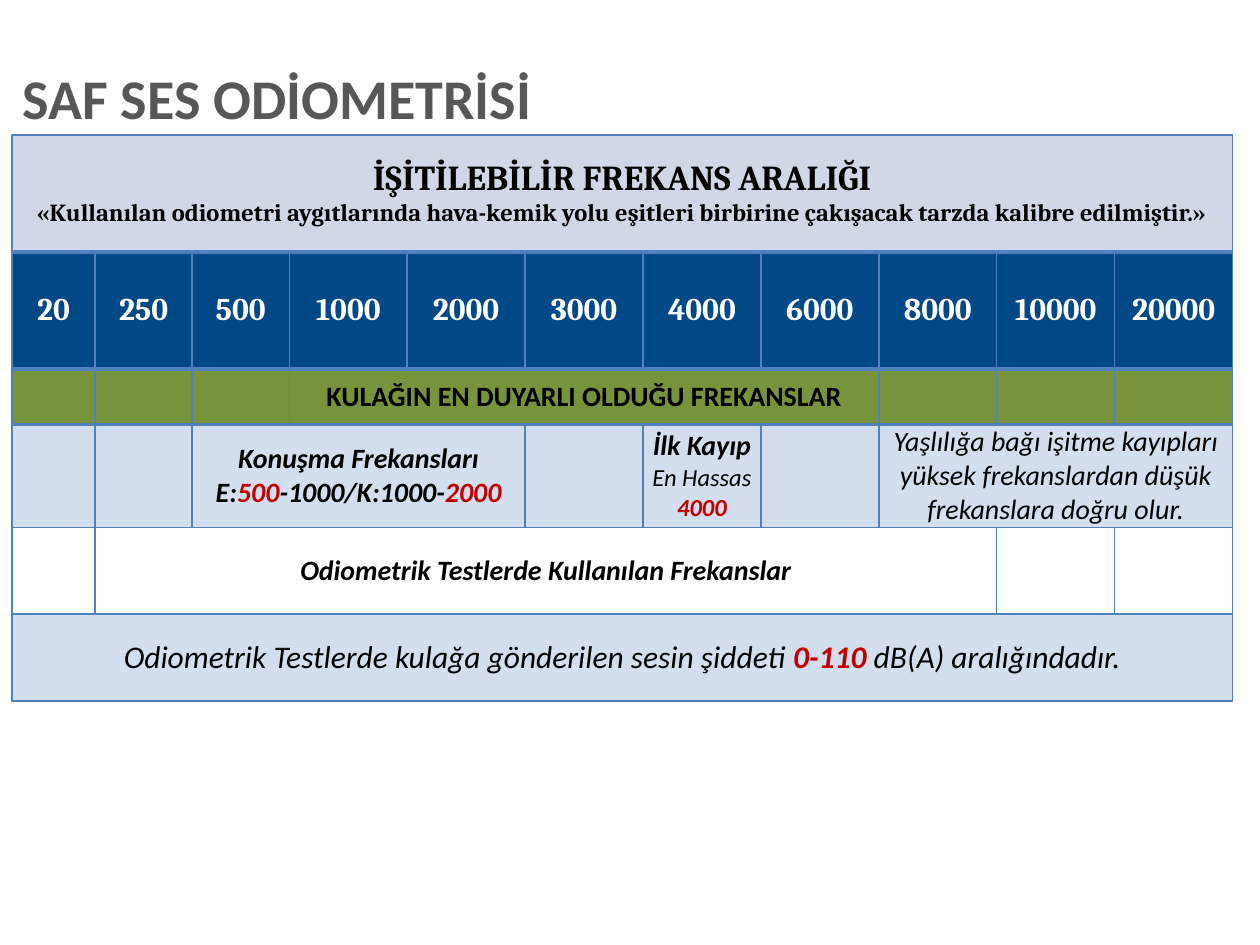
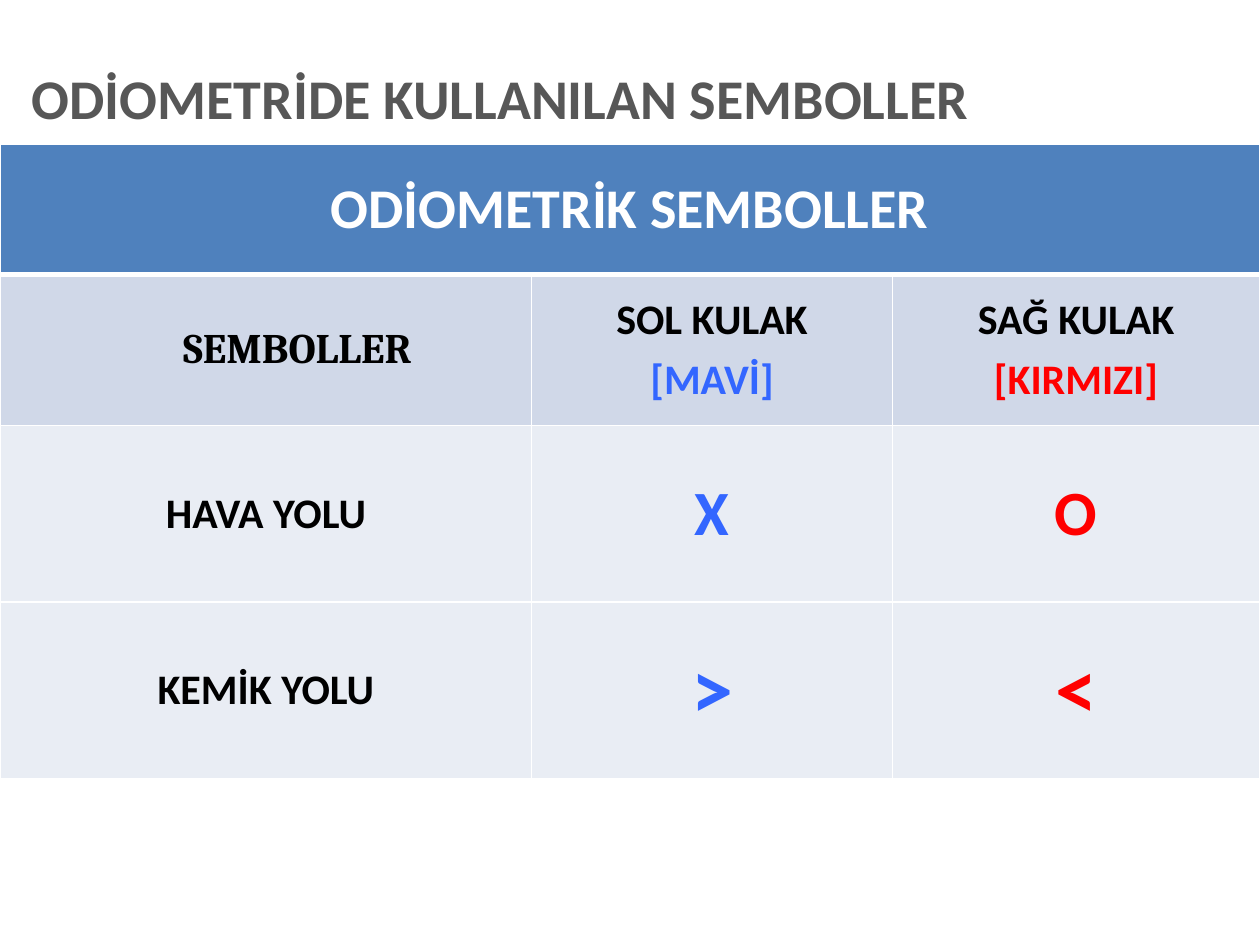
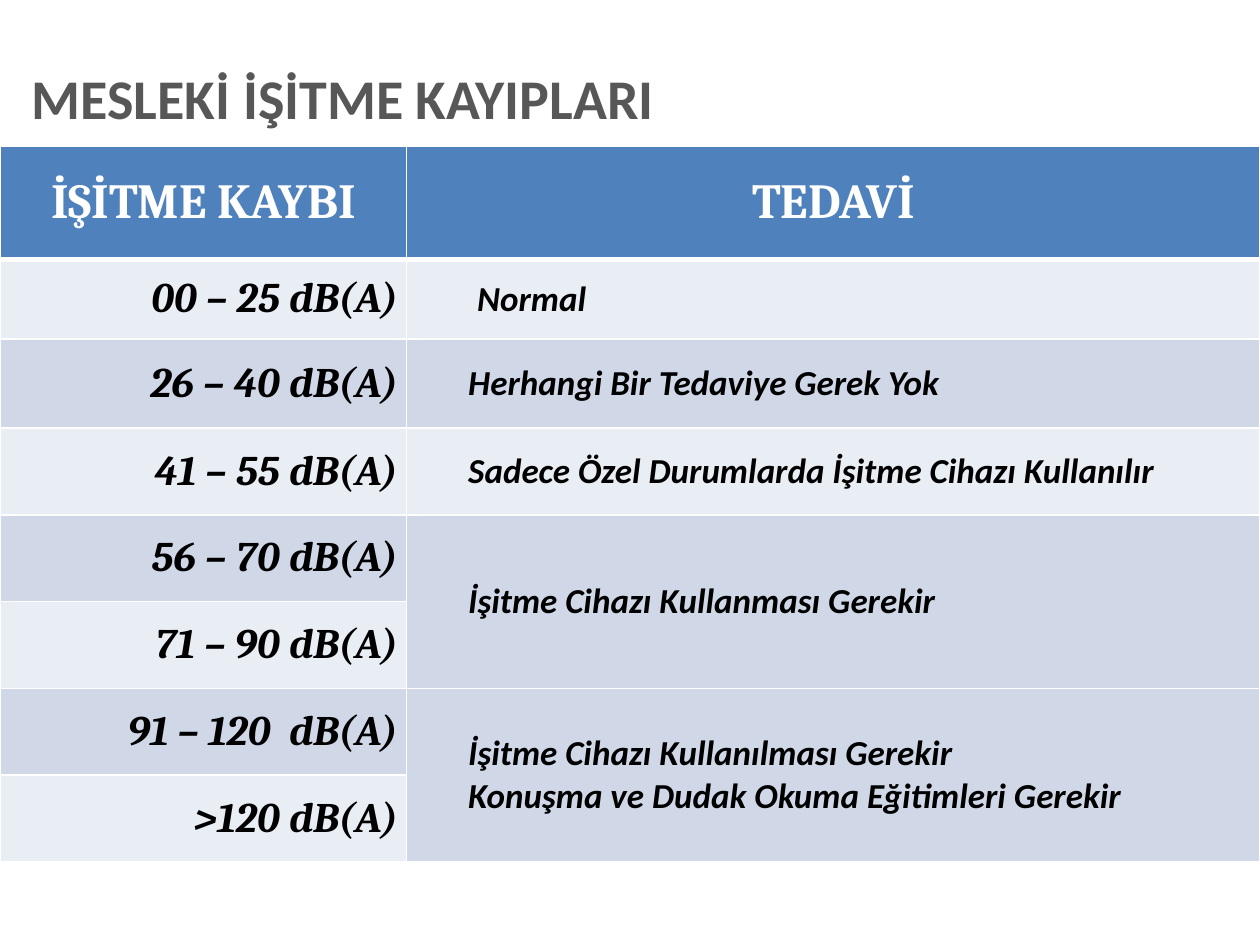
import dataclasses

import pptx
import pptx.dml.color
import pptx.enum.text
import pptx.oxml
import pptx.oxml.ns
import pptx.util

Cm = pptx.util.Cm
Pt = pptx.util.Pt
ALIGN = pptx.enum.text.PP_ALIGN
ANCHOR = pptx.enum.text.MSO_ANCHOR

COLORS = {
    "title": "575757", "text": "000000", "white": "FFFFFF",
    "header": "4F81BD", "band": "D0D8E8", "light": "E9EDF4",
    "frequency": "004986", "sensitive": "77933C", "pale": "D3DFEE",
    "accent": "C00000", "left ear": "3366FF", "right ear": "FF0000",
}


@dataclasses.dataclass(frozen=True)
class Style:
    size: float
    font: str = "Calibri"
    color: str = "text"
    bold: bool = True
    italic: bool = False

    def but(self, **changes):
        return dataclasses.replace(self, **changes)


@dataclasses.dataclass(frozen=True)
class Box:
    left: float
    top: float
    width: float
    height: float


@dataclasses.dataclass(frozen=True)
class Padding:
    side: float
    edge: float


WIDE, NARROW, NONE = Padding(0.25, 0.13), Padding(0.18, 0), Padding(0, 0)
TITLE = Style(32, color="title")
TITLE_BOX = Box(0.64, 1.14, 24.49, 1.8)


def format_run(run, style):
    font = run.font
    font.size, font.name = Pt(style.size), style.font
    font.bold, font.italic = style.bold, style.italic
    font.color.rgb = pptx.dml.color.RGBColor.from_string(COLORS[style.color])


def add_title(deck, wording, box):
    """Add a title-only slide and format its title."""
    slide = deck.slides.add_slide(deck.slide_layouts[5])
    title = slide.shapes.title
    title.left, title.top = Cm(box.left), Cm(box.top)
    title.width, title.height = Cm(box.width), Cm(box.height)
    frame = title.text_frame
    frame.text = wording
    frame.word_wrap = True
    frame.vertical_anchor = ANCHOR.MIDDLE
    frame.margin_left = frame.margin_right = 0
    frame.margin_top = frame.margin_bottom = Cm(0.13)
    paragraph = frame.paragraphs[0]
    paragraph.alignment = ALIGN.LEFT
    paragraph.line_spacing = 0.9
    format_run(paragraph.runs[0], TITLE)
    return slide


def draw_borders(cell, color, top, bottom):
    properties = cell._tc.get_or_add_tcPr()
    for side, width in (("L", 1), ("R", 1), ("T", top), ("B", bottom)):
        properties.append(pptx.oxml.parse_xml(
            f'<a:ln{side} {pptx.oxml.ns.nsdecls("a")} w="{Pt(width)}">'
            f'<a:solidFill><a:srgbClr val="{COLORS[color]}"/></a:solidFill>'
            f'</a:ln{side}>'))


def add_grid(slide, box, columns, rows, line_color, edges, fills, padding):
    """Add a table; edges are the widths of its horizontal lines, fills go by row."""
    table = slide.shapes.add_table(
        len(rows), len(columns), Cm(box.left), Cm(box.top),
        Cm(box.width), Cm(box.height)).table
    table.first_row = table.horz_banding = False
    for column, share in zip(table.columns, columns):
        column.width = Cm(box.width * share / sum(columns))
    for index, share in enumerate(rows):
        table.rows[index].height = Cm(box.height * share / sum(rows))
        for cell in table.rows[index].cells:
            draw_borders(cell, line_color, edges[index], edges[index + 1])
            if fills[index]:
                cell.fill.solid()
                cell.fill.fore_color.rgb = pptx.dml.color.RGBColor.from_string(
                    COLORS[fills[index]])
            else:
                cell.fill.background()
            cell.vertical_anchor = ANCHOR.MIDDLE
            pad_cell(cell, padding)
    return table


def pad_cell(cell, padding):
    cell.margin_left = cell.margin_right = Cm(padding.side)
    cell.margin_top = cell.margin_bottom = Cm(padding.edge)


def write(cell, style, *lines, align=ALIGN.CENTER, gap=0, left=0, first=0):
    """Fill a cell; a line is plain text or a list of (text, style) runs."""
    frame = cell.text_frame
    for index, line in enumerate(lines):
        paragraph = frame.add_paragraph() if index else frame.paragraphs[0]
        if left or first:
            properties = paragraph._p.get_or_add_pPr()
            properties.set("marL", str(Cm(left)))
            properties.set("indent", str(Cm(first)))
        paragraph.alignment = align
        if index and gap:
            paragraph.space_before = Pt(gap)
        for wording, run_style in [(line, style)] if isinstance(line, str) else line:
            run = paragraph.add_run()
            run.text = wording
            format_run(run, run_style)


def merge(table, row, column, height, width):
    cell = table.cell(row, column)
    cell.merge(table.cell(row + height - 1, column + width - 1))
    return cell


def frequency_table(slide, box):
    table = add_grid(
        slide, box, [1.68, 1.96, 1.96] + [2.38] * 8,
        [2.36, 2.36, 1.12, 2.05, 1.75, 1.75], "header",
        [1, 2.25, 2.25, 2.25, 1, 1, 1],
        ["band", "frequency", "sensitive", "pale", None, "pale"], NARROW)
    heading = Style(20, "Cambria")
    strong = Style(16, italic=True)
    plain = strong.but(bold=False)
    accent = strong.but(color="accent")

    # Audible range and its frequencies
    write(merge(table, 0, 0, 1, 11), heading, "İŞİTİLEBİLİR FREKANS ARALIĞI",
          [("«Kullanılan odiometri aygıtlarında hava-kemik yolu eşitleri birbirine "
            "çakışacak tarzda kalibre edilmiştir.»", heading.but(size=14))])
    frequencies = [20, 250, 500, 1000, 2000, 3000, 4000, 6000, 8000, 10000, 20000]
    for column, frequency in enumerate(frequencies):
        write(table.cell(1, column), heading.but(size=18, color="white"), str(frequency))

    # Ranges below the frequencies they cover
    write(merge(table, 2, 3, 1, 5), Style(16), "KULAĞIN EN DUYARLI OLDUĞU FREKANSLAR")
    write(merge(table, 3, 2, 1, 3), strong, "Konuşma Frekansları",
          [("E:", strong), ("500", accent), ("-1000/K:1000-", strong), ("2000", accent)])
    write(table.cell(3, 6), strong, "İlk Kayıp",
          [("En Hassas", plain.but(size=14))], [("4000", accent.but(size=14))])
    ageing = merge(table, 3, 8, 1, 3)
    ageing.vertical_anchor = ANCHOR.TOP
    write(ageing, plain, "Yaşlılığa bağı işitme kayıpları yüksek frekanslardan "
                         "düşük frekanslara doğru olur.")
    write(merge(table, 4, 1, 1, 8), strong, "Odiometrik Testlerde Kullanılan Frekanslar")

    # Sound level
    level = plain.but(size=18)
    write(merge(table, 5, 0, 1, 11), level,
          [("Odiometrik Testlerde kulağa gönderilen sesin şiddeti ", level),
           ("0-110", accent.but(size=18)), (" dB(A) aralığındadır.", level)])


def symbol_table(slide, box):
    table = add_grid(
        slide, box, [10.72, 7.27, 7.41], [2.64, 3.04, 3.56, 3.56], "white",
        [1, 3, 1, 1, 1], ["header", "band", "light", "light"], WIDE)
    label = Style(24)

    # Headings
    write(merge(table, 0, 0, 1, 3), Style(32, color="white"), "ODİOMETRİK SEMBOLLER")
    write(table.cell(1, 0), label.but(font="Cambria"), "SEMBOLLER", left=1.27)

    # One column for each ear
    ears = [("SOL KULAK", "[MAVİ]", "left ear", "X", ">"),
            ("SAĞ KULAK", "[KIRMIZI]", "right ear", "O", "<")]
    for column, (ear, color_name, color, air, bone) in enumerate(ears, 1):
        write(table.cell(1, column), label, ear,
              [(color_name, label.but(color=color))], gap=4.8)
        write(table.cell(2, column), Style(36, color=color), air)
        write(table.cell(3, column), Style(48, color=color), bone)
    for row, pathway in enumerate(["HAVA YOLU", "KEMİK YOLU"], 2):
        write(table.cell(row, 0), label, pathway)


def treatment_table(slide, box):
    table = add_grid(
        slide, box, [8.2, 17.2], [2.28, 1.6, 1.8] + [1.75] * 5, "white",
        [1, 3] + [1] * 7, ["header"] + ["light", "band"] * 3 + ["light"], NARROW)

    # Headings
    for column, heading in enumerate(["İŞİTME KAYBI", "TEDAVİ"]):
        pad_cell(table.cell(0, column), WIDE)
        write(table.cell(0, column), Style(28, "Cambria", "white"), heading)

    # Hearing loss
    losses = ["00 – 25 dB(A)", "26 – 40 dB(A)", "41 – 55 dB(A)", "56 – 70 dB(A)",
              "71 – 90 dB(A)", "91 – 120  dB(A)", ">120 dB(A)"]
    for row, loss in enumerate(losses, 1):
        write(table.cell(row, 0), Style(24, "Cambria", italic=True), loss,
              align=ALIGN.RIGHT, left=1.27)

    # Treatment, with the number of rows it covers
    treatments = [
        (1, ["Normal"]),
        (1, ["Herhangi Bir Tedaviye Gerek Yok"]),
        (1, ["Sadece Özel Durumlarda İşitme Cihazı Kullanılır"]),
        (2, ["İşitme Cihazı Kullanması Gerekir"]),
        (2, ["İşitme Cihazı Kullanılması Gerekir",
             "Konuşma ve Dudak Okuma Eğitimleri Gerekir"]),
    ]
    row = 1
    for height, lines in treatments:
        cell = merge(table, row, 1, height, 1) if height > 1 else table.cell(row, 1)
        if row > 1:
            pad_cell(cell, NONE)
        write(cell, Style(20, italic=True), *lines, align=ALIGN.LEFT, first=1.24)
        row += height


def main():
    deck = pptx.Presentation()
    deck.slide_width, deck.slide_height = Cm(25.4), Cm(19.05)

    slide = add_title(deck, "SAF SES ODİOMETRİSİ", dataclasses.replace(TITLE_BOX, left=0.46))
    frequency_table(slide, Box(0.24, 2.72, 24.61, 11.39))

    slide = add_title(deck, "ODİOMETRİDE KULLANILAN SEMBOLLER", TITLE_BOX)
    symbol_table(slide, Box(0, 2.9, 25.4, 12.8))

    slide = add_title(deck, "MESLEKİ İŞİTME KAYIPLARI", TITLE_BOX)
    treatment_table(slide, Box(0, 2.95, 25.4, 14.43))

    deck.save("out.pptx")


if __name__ == "__main__":
    main()
